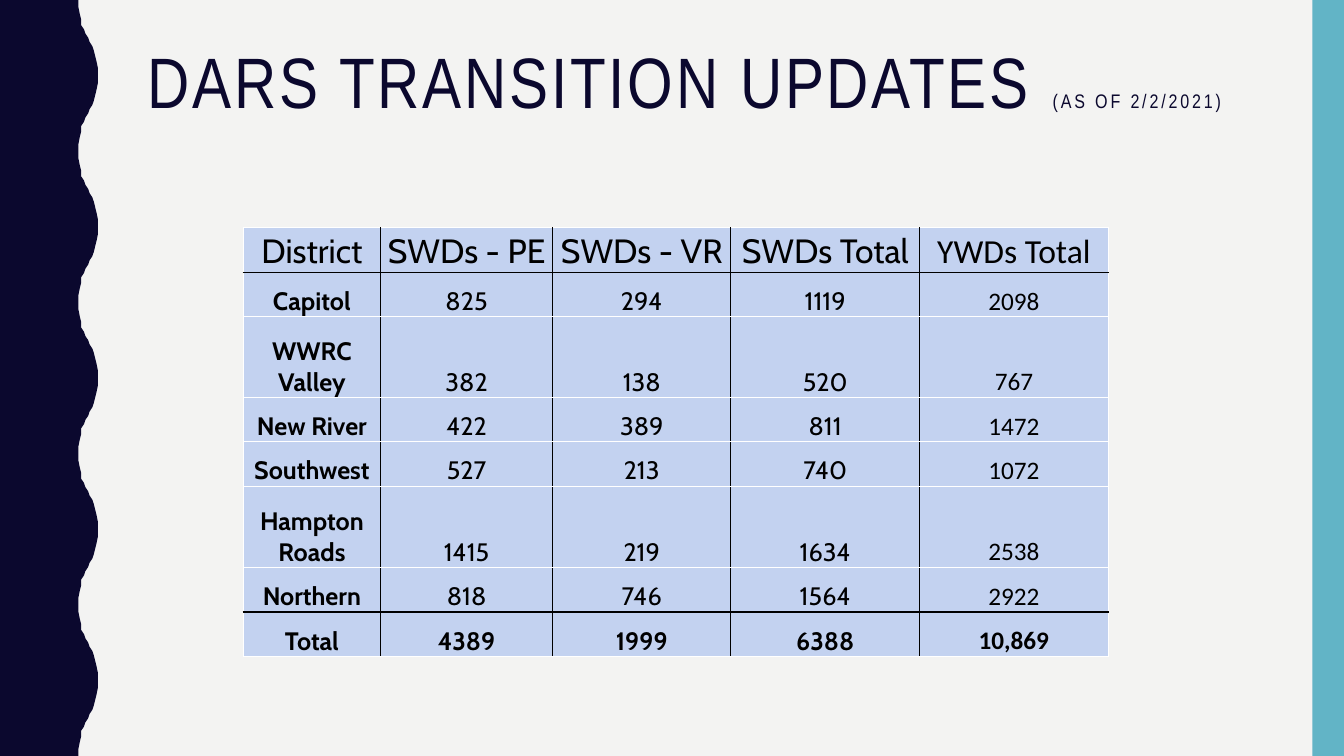
"""Build the DARS transition updates slide."""
from lxml.etree import SubElement
from pptx import Presentation
from pptx.dml.color import RGBColor
from pptx.enum.shapes import MSO_SHAPE as Shape
from pptx.enum.text import MSO_ANCHOR as Anchor, PP_ALIGN as Align
from pptx.oxml.ns import qn
from pptx.util import Pt

NAVY, TEAL, PAPER = "0B082E", "62B4C6", "F3F3F2"
CELL, BLACK, WHITE = "C3D2F0", "000000", "FFFFFF"
WIDE, HIGH = 960, 540
TITLE = [("DARS TRANSITION UPDATES ", 51), ("(AS OF 2/2/2021)", 14)]
ROWS = [
    ("District", "SWDs - PE", "SWDs - VR", "SWDs Total", "YWDs Total"),
    ("Capitol", "825", "294", "1119", "2098"),
    ("WWRC Valley", "382", "138", "520", "767"),
    ("New River", "422", "389", "811", "1472"),
    ("Southwest", "527", "213", "740", "1072"),
    ("Hampton Roads", "1415", "219", "1634", "2538"),
    ("Northern", "818", "746", "1564", "2922"),
    ("Total", "4389", "1999", "6388", "10,869"),
]
COLS = [98, 123, 127.3, 134.8, 134.8]
TALLS = [31.8, 31.8, 57.6, 31.8, 31.8, 58, 31.8, 31.8]
PERIOD = 108
CURVE = [(56.2, 0), (56.2, 5), (56.9, 10), (57.6, 14.4), (58.3, 18),
         (59.8, 21), (61.2, 24), (62.6, 27), (64.1, 30), (65.5, 33),
         (67, 36), (68.4, 39.6), (69.1, 44), (69.8, 49), (69.8, 54)]


def paint(part, color):
    part.solid()
    part.fore_color.rgb = RGBColor.from_string(color)


def finish(shape, color):
    paint(shape.fill, color)
    shape.line.fill.background()
    shape.shadow.inherit = False


def edge(cell, side, color):
    line = SubElement(cell._tc.get_or_add_tcPr(), qn("a:ln" + side), w=str(Pt(1)))
    fill = SubElement(line, qn("a:solidFill"))
    SubElement(fill, qn("a:srgbClr"), val=color)


def add_sides(slide):
    wave = CURVE + [(x, PERIOD - y) for x, y in CURVE[-2::-1]]
    points = [(x, y + n * PERIOD) for n in range(HIGH // PERIOD) for x, y in wave]
    points.append((0, HIGH))
    path = slide.shapes.build_freeform(0, 0, scale=Pt(1))
    path.add_line_segments(points, close=True)
    finish(path.convert_to_shape(), NAVY)
    bar = slide.shapes.add_shape(Shape.RECTANGLE, Pt(937.5), 0, Pt(22.5), Pt(HIGH))
    finish(bar, TEAL)


def add_title(slide):
    box = slide.shapes.add_textbox(Pt(98.6), Pt(30.2), Pt(801.4), Pt(117.4))
    box.text_frame.word_wrap = True
    para = box.text_frame.paragraphs[0]
    para.line_spacing = 0.9
    para.font.name = "Arial Narrow"
    paint(para.font.fill, NAVY)
    for text, size in TITLE:
        run = para.add_run()
        run.text = text
        run.font.size = Pt(size)
        run._r.get_or_add_rPr().set("spc", "200")


def fill_cell(cell, text, row, col):
    last, end = len(ROWS) - 1, len(COLS) - 1
    rules = (0, last - 1)
    edge(cell, "L", BLACK if col > 0 else WHITE)
    edge(cell, "R", BLACK if col < end else WHITE)
    edge(cell, "T", BLACK if row - 1 in rules else WHITE)
    edge(cell, "B", BLACK if row in rules else WHITE)
    paint(cell.fill, CELL)
    cell.margin_left = cell.margin_right = cell.margin_top = Pt(0.72)
    cell.margin_bottom = 0
    cell.vertical_anchor = Anchor.BOTTOM
    cell.text = text
    para = cell.text_frame.paragraphs[0]
    para.alignment = Align.CENTER
    font = para.font
    font.name = "Calibri" if col == end else "Cabin"
    font.size = Pt(18 if row else 24)
    font.bold = row == last or (row > 0 and col == 0)
    paint(font.fill, BLACK)


def add_grid(slide):
    frame = slide.shapes.add_table(len(ROWS), len(COLS), Pt(173.8), Pt(162.7),
                                   Pt(sum(COLS)), Pt(sum(TALLS)))
    table = frame.table
    table.first_row = table.horz_banding = False
    for col, width in zip(table.columns, COLS):
        col.width = Pt(width)
    for row, tall in zip(table.rows, TALLS):
        row.height = Pt(tall)
    for r, texts in enumerate(ROWS):
        for c, text in enumerate(texts):
            fill_cell(table.cell(r, c), text, r, c)


def main():
    deck = Presentation()
    deck.slide_width, deck.slide_height = Pt(WIDE), Pt(HIGH)
    slide = deck.slides.add_slide(deck.slide_layouts[6])
    paint(slide.background.fill, PAPER)
    add_sides(slide)
    add_title(slide)
    add_grid(slide)
    deck.save("out.pptx")


if __name__ == "__main__":
    main()
